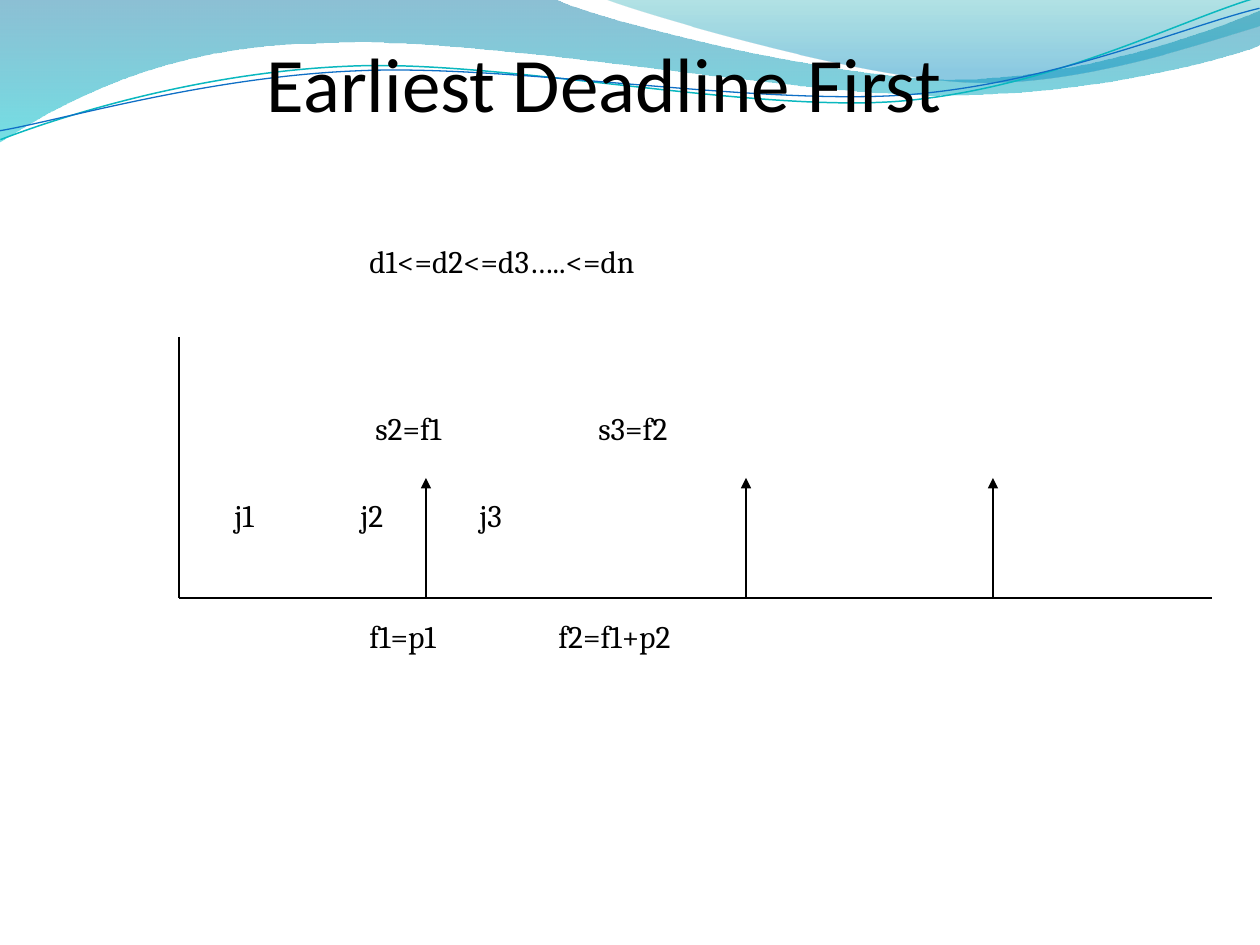
from lxml import etree
from pptx import Presentation
from pptx import util as u
from pptx.dml import color
from pptx.enum import shapes, text
from pptx.oxml import ns

PX = 914400 / 126
BLACK = color.RGBColor(0, 0, 0)
DEEP_BLUE = color.RGBColor(0x00, 0x74, 0xA1)
TURQUOISE = color.RGBColor(0x00, 0xC6, 0xCF)
TEAL = color.RGBColor(0x00, 0xA1, 0xA9)
SKY_BLUE = color.RGBColor(0x00, 0x8B, 0xBF)
CYAN_LINE = color.RGBColor(0x0A, 0xB8, 0xBF)
BLUE_LINE = color.RGBColor(0x0F, 0x6F, 0xC6)

BANDS = [
    ([(0, -1), (554, -1),
      (600, 21, 837, 79, 955, 79), (1075, 79, 1207, 33, 1260, 11), (1261, 45),
      (1239, 55, 1096, 96, 940, 95), (784, 95, 481, 35, 324, 43),
      (163, 44, 58, 105, -1, 142), (0, -1)],
     [(0, DEEP_BLUE, 45), (1, TURQUOISE, 55)]),
    ([(604, -1), (641, 14, 859, 78, 969, 82), (1079, 87, 1211, 40, 1260, 26),
      (1260, 0), (604, -1)],
     [(0, TEAL, 30), (0.8, SKY_BLUE, 45)]),
]
STRANDS = [
    ([(-2, 110), (58, 90, 199, 52, 350, 53), (499, 53, 745, 118, 896, 114),
      (1049, 109, 1184, 45, 1261, 27)], CYAN_LINE, 0.85),
    ([(-2, 101), (57, 94, 207, 57, 357, 58), (509, 58, 750, 111, 902, 108),
      (1052, 104, 1188, 52, 1262, 38)], BLUE_LINE, 0.75),
]
LABELS = [
    (43, 153, 916, ["j1", "j2", "j3"], [126, 245]),
    (178, 274, 549, ["f1=p1", "f2=f1+p2"], [189]),
    (178, -101, 403, ["d1<=d2<=d3…..<=dn"], []),
    (184, 66, 450, ["s2=f1", "s3=f2"], [223]),
]


def px(length):
    return u.Emu(round(length * PX))


def set_values(target, values):
    for name, value in values.items():
        setattr(target, name, value)


def add_outline(page, left, top, path, close):
    points = [(px(left + x), px(top + y))
              for part in path for x, y in zip(part[::2], part[1::2])]
    builder = page.shapes.build_freeform(*points[0], scale=1.0)
    builder.add_line_segments(points[1:], close=close)
    shape = builder.convert_to_shape()
    shape.shadow.inherit = False
    nodes = iter(list(shape.element.iter(ns.qn("a:lnTo"))))
    for part in path[1:]:
        first = next(nodes)
        if len(part) == 6:
            first.tag = ns.qn("a:cubicBezTo")
            for _ in range(2):
                extra = next(nodes)
                first.append(extra[0])
                extra.getparent().remove(extra)
    return shape


def add_waves(page, left, top):
    for path, stops in BANDS:
        band = add_outline(page, left, top, path, True)
        band.line.fill.background()
        band.fill.gradient()
        band.fill.gradient_angle = 270
        for stop, (position, shade, _) in zip(band.fill.gradient_stops, stops):
            stop.position = position
            stop.color.rgb = shade
        for node, (_, _, opacity) in zip(band.element.iter(ns.qn("a:gs")), stops):
            etree.SubElement(node[0], ns.qn("a:alpha"), val=str(opacity * 1000))
    for path, shade, width in STRANDS:
        strand = add_outline(page, left, top, path, False)
        strand.rotation = 357.3
        strand.fill.background()
        strand.line.color.rgb = shade
        strand.line.width = u.Pt(width)


def add_text(page, left, top, width, height, words, font, frame_values, align, tabs=()):
    box = page.shapes.add_textbox(px(left), px(top), px(width), px(height))
    set_values(box.text_frame, {"word_wrap": True, **frame_values})
    para = box.text_frame.paragraphs[0]
    para.alignment = align
    span = para.add_run()
    span.text = words
    set_values(span.font, font)
    span.font.color.rgb = BLACK
    if tabs:
        stops = etree.SubElement(para._p.get_or_add_pPr(), ns.qn("a:tabLst"))
        for stop in tabs:
            etree.SubElement(stops, ns.qn("a:tab"), pos=str(px(stop)), algn="l")


def add_title(page, left, top, width, height):
    add_text(page, left, top, width, height, "Earliest Deadline First",
             {"name": "Calibri", "size": u.Pt(44)},
             {"vertical_anchor": text.MSO_ANCHOR.MIDDLE}, text.PP_ALIGN.CENTER)


def add_rule(page, start, end, arrow=False):
    rule = page.shapes.add_connector(shapes.MSO_CONNECTOR.STRAIGHT,
                                     *map(px, start), *map(px, end))
    rule.line.width = u.Pt(0.75)
    rule.line.color.rgb = BLACK
    if arrow:
        etree.SubElement(rule.line._get_or_add_ln(), ns.qn("a:tailEnd"), type="triangle")
    etree.SubElement(rule.element.spPr, ns.qn("a:effectLst"))


def add_schedule(page, left, top, width, height):
    base = top + height
    add_rule(page, (left, top), (left, base))
    add_rule(page, (left, base), (left + width, base))
    for offset in (247, 567, 814):
        add_rule(page, (left + offset, base), (left + offset, base - 120), True)
    for x, y, label_width, words, tabs in LABELS:
        add_text(page, left + x, top + y, label_width, 97, "\t".join(words),
                 {"name": "Cambria", "size": u.Pt(18)},
                 {"vertical_anchor": text.MSO_ANCHOR.TOP}, text.PP_ALIGN.LEFT, tabs)


def main():
    deck = Presentation()
    set_values(deck, {"slide_width": px(1260), "slide_height": px(945)})
    page = deck.slides.add_slide(deck.slide_layouts[6])
    add_waves(page, 0, 0)
    add_title(page, 69, -2, 1071, 168)
    add_schedule(page, 179, 337, 1033, 261)
    deck.save("out.pptx")


if __name__ == "__main__":
    main()
